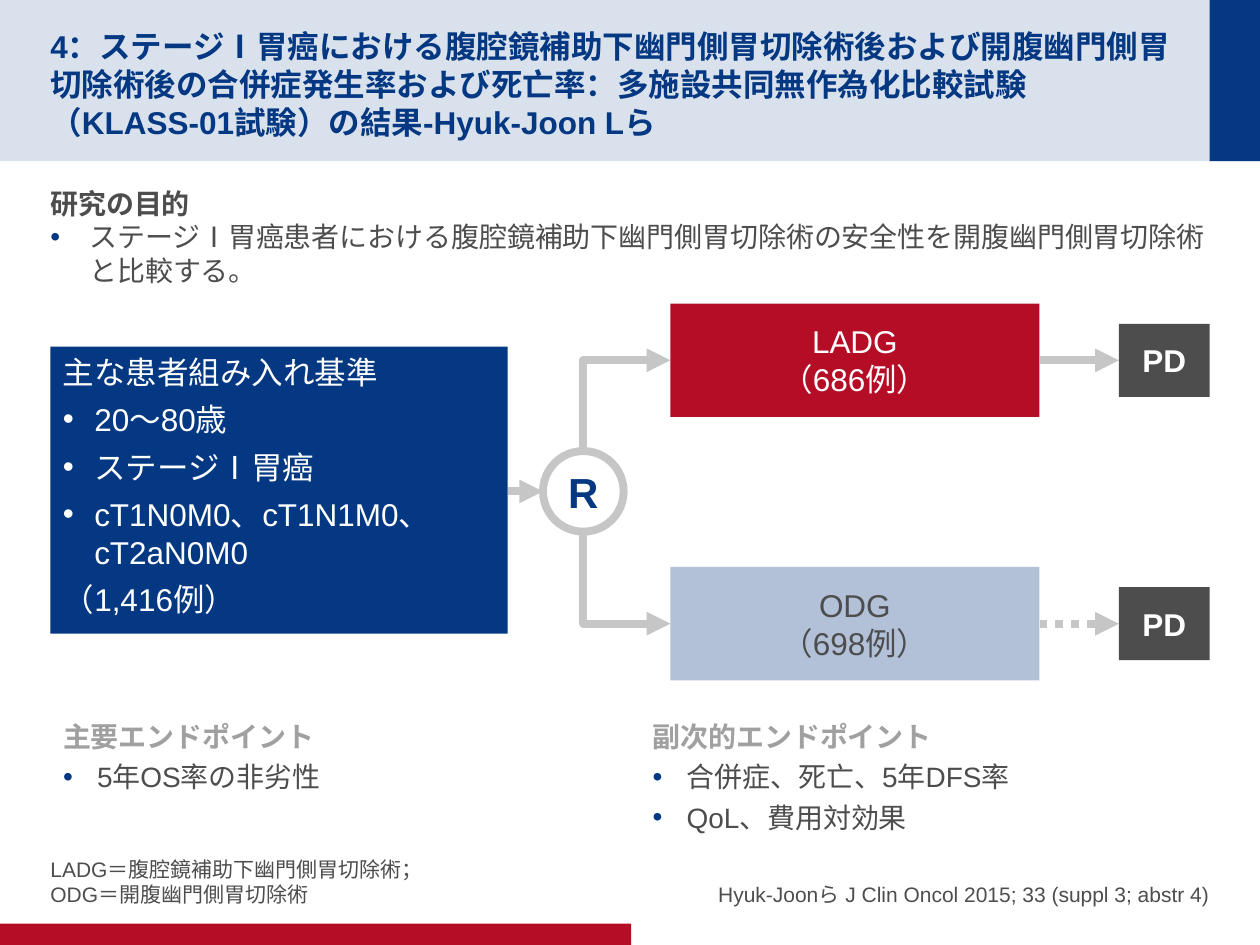
from lxml import etree
from pptx import Presentation
from pptx.dml.color import RGBColor
from pptx.enum.dml import MSO_LINE
from pptx.enum.shapes import MSO_CONNECTOR, MSO_SHAPE
from pptx.enum.text import MSO_ANCHOR, MSO_AUTO_SIZE, PP_ALIGN
from pptx.oxml.ns import qn
from pptx.util import Inches, Pt

RECT, OVAL = MSO_SHAPE.RECTANGLE, MSO_SHAPE.OVAL
STRAIGHT, ELBOW = MSO_CONNECTOR.STRAIGHT, MSO_CONNECTOR.ELBOW
LEFT, CENTER, RIGHT = PP_ALIGN.LEFT, PP_ALIGN.CENTER, PP_ALIGN.RIGHT
TOP, MIDDLE, BOTTOM = MSO_ANCHOR.TOP, MSO_ANCHOR.MIDDLE, MSO_ANCHOR.BOTTOM
DOTTED = MSO_LINE.ROUND_DOT
NAVY, RED, PALE = "043882", "B60D27", "B2C0D8"
DARK, GRAY, SILVER, WHITE = "4D4D4D", "A0A0A0", "C6C6C6", "FFFFFF"
COLUMNS, ROWS = 100, 75


def rgb(color):
    return RGBColor.from_string(color)


def sub(parent, tag, **attrs):
    return etree.SubElement(parent, qn(tag), attrs)


def item(text, indent=0.27, **style):
    return dict(text=text, bullet=True, indent=indent, **style)


class Deck:
    font = "Arial"

    def __init__(self, layout):
        self.prs = Presentation()
        self.prs.slide_width, self.prs.slide_height = Inches(10), Inches(7.5)
        self.s = self.prs.slides.add_slide(self.prs.slide_layouts[layout])

    def x(self, column):
        return round(self.prs.slide_width * column / COLUMNS)

    def y(self, row):
        return round(self.prs.slide_height * row / ROWS)

    def box(self, left, top, width, height):
        return self.x(left), self.y(top), self.x(width), self.y(height)

    def set_text(self, sp, paragraphs, size, color=DARK, bold=False, align=LEFT,
                 anchor=TOP, inset=(0.1, 0.05, 0.1, 0.05), after=0, wrap=True):
        tf = sp.text_frame
        tf.word_wrap, tf.auto_size = wrap, MSO_AUTO_SIZE.NONE
        tf.vertical_anchor = anchor
        (tf.margin_left, tf.margin_top,
         tf.margin_right, tf.margin_bottom) = map(Inches, inset)
        for i, entry in enumerate(paragraphs):
            if isinstance(entry, str):
                entry = dict(text=entry)
            p = tf.add_paragraph() if i else tf.paragraphs[0]
            p.text, p.alignment = entry["text"], align
            p.space_before, p.space_after = Pt(0), Pt(after)
            self.bullet(p, entry)
            p.font.name, p.font.size = self.font, Pt(size)
            p.font.bold = entry.get("bold", bold)
            p.font.color.rgb = rgb(entry.get("color", color))
            sub(p.font._element, "a:ea", typeface=self.font)

    def bullet(self, p, entry):
        pPr = p._p.get_or_add_pPr()
        indent = Inches(entry.get("indent", 0))
        pPr.set("marL", str(indent))
        pPr.set("indent", str(-indent))
        if entry.get("bullet"):
            mark = sub(pPr, "a:buClr")
            sub(mark, "a:srgbClr", val=entry.get("mark", NAVY))
            sub(pPr, "a:buFont", typeface=self.font)
            sub(pPr, "a:buChar", char="•")
        else:
            sub(pPr, "a:buNone")

    def placeholder(self, idx, at, paragraphs, size, **style):
        sp = self.s.placeholders[idx]
        sp.left, sp.top, sp.width, sp.height = self.box(*at)
        self.set_text(sp, paragraphs, size, **style)

    def text(self, at, paragraphs, size, **style):
        self.set_text(self.s.shapes.add_textbox(*self.box(*at)), paragraphs, size, **style)

    def shape(self, kind, at, fill=None, line=None, alpha=None):
        sp = self.s.shapes.add_shape(kind, *self.box(*at))
        sp.shadow.inherit = False
        if fill:
            sp.fill.solid()
            sp.fill.fore_color.rgb = rgb(fill)
        else:
            sp.fill.background()
        if alpha:
            color = sp._element.spPr.find(qn("a:solidFill"))[0]
            sub(color, "a:alpha", val=str(alpha * 1000))
        if line:
            sp.line.color.rgb, sp.line.width = rgb(line), Pt(4.5)
        else:
            sp.line.fill.background()
        return sp

    def panel(self, at, fill, paragraphs, color=WHITE, **style):
        style = dict(align=CENTER, anchor=MIDDLE, inset=(0.1, 0, 0.1, 0)) | style
        self.set_text(self.shape(RECT, at, fill), paragraphs, 18, color=color, **style)

    def arrow(self, x1, y1, x2, y2, kind=STRAIGHT, dash=None):
        c = self.s.shapes.add_connector(kind, self.x(x1), self.y(y1), self.x(x2), self.y(y2))
        c.line.color.rgb, c.line.width = rgb(SILVER), Pt(4.5)
        if dash:
            c.line.dash_style = dash
        sub(c._element.spPr.find(qn("a:ln")), "a:tailEnd", type="triangle")
        sub(c._element.spPr, "a:effectLst")
        return c

    def branch(self, x1, y1, x2, y2):
        cx, cy = (x1 + x2) / 2, (y1 + y2) / 2
        half_w, half_h = abs(y2 - y1) / 2, (x2 - x1) / 2
        turn = 1 if y2 < y1 else -1
        c = self.arrow(cx + half_w, cy + turn * half_h,
                       cx - half_w, cy - turn * half_h, ELBOW)
        c._element.spPr.find(qn("a:prstGeom")).set("prst", "bentConnector2")
        c._element.spPr.find(qn("a:xfrm")).set("rot", str(turn * 90 % 360 * 60000))


def main():
    d = Deck(4)
    d.shape(RECT, (0, 0, 100, 12.8), NAVY, alpha=15)
    d.shape(RECT, (96, 0, 4, 12.8), NAVY)
    d.shape(RECT, (0, 73.3, 50.1, 1.7), RED)
    d.placeholder(0, (4, 2, 90.1, 8.8), [
        "4：ステージⅠ胃癌における腹腔鏡補助下幽門側胃切除術後および開腹幽門側胃切除術後の"
        "合併症発生率および死亡率：多施設共同無作為化比較試験（KLASS-01試験）の結果‐Hyuk-Joon Lら",
    ], 18, color=NAVY, bold=True, anchor=MIDDLE, inset=(0, 0.05, 0, 0))
    d.text((4, 14.3, 93.6, 9.1), [
        dict(text="研究の目的", bold=True),
        item("ステージⅠ胃癌患者における腹腔鏡補助下幽門側胃切除術の安全性を"
             "開腹幽門側胃切除術と比較する。", 0.31),
    ], 16, inset=(0, 0.05, 0.1, 0.05))

    criteria = ["20～80歳", "ステージⅠ胃癌", "cT1N0M0、cT1N1M0、 cT2aN0M0"]
    d.panel((4, 27.5, 36.3, 22.8), NAVY, [
        "主な患者組み入れ基準",
        *[item(text, 0.25, mark=WHITE) for text in criteria],
        dict(text="（1,416例）", indent=0.32),
    ], align=LEFT, anchor=TOP, inset=(0.1, 0.05, 0.1, 0.05), after=5.5)

    d.arrow(40.3, 39, 43.1, 39)
    circle = d.shape(OVAL, (43.1, 35.8, 6.4, 6.4), line=SILVER)
    d.set_text(circle, ["R"], 24, color=NAVY, bold=True, align=CENTER, anchor=MIDDLE, wrap=False)
    arms = [
        ("LADG", "（686例）", RED, WHITE, 28.6, 35.8, None),
        ("ODG", "（698例）", PALE, DARK, 49.5, 42.2, DOTTED),
    ]
    for name, count, fill, color, row, start, dash in arms:
        d.branch(46.3, start, 53.2, row)
        d.panel((53.2, row - 4.5, 29.3, 9), fill, [name, count], color)
        d.arrow(82.5, row, 88.8, row, dash=dash)
        d.panel((88.8, row - 2.9, 7.2, 5.8), DARK, ["PD"], bold=True)

    endpoints = [
        (2, 4, "主要エンドポイント", ["5年OS率の非劣性"]),
        (4, 50.8, "副次的エンドポイント", ["合併症、死亡、5年DFS率", "QoL、費用対効果"]),
    ]
    for idx, column, heading, goals in endpoints:
        d.placeholder(idx, (column, 56.6, 45.2, 11), [
            dict(text=heading, bold=True, color=GRAY), *map(item, goals),
        ], 16, after=4)
    notes = [
        (1, 4, LEFT, "LADG＝腹腔鏡補助下幽門側胃切除術；\vODG＝開腹幽門側胃切除術"),
        (3, 50.8, RIGHT, "Hyuk-Joonら J Clin Oncol 2015; 33 (suppl 3; abstr 4)"),
    ]
    for idx, column, align, note in notes:
        d.placeholder(idx, (column, 66.7, 45.2, 5.3), [note], 12, align=align,
                      anchor=BOTTOM, inset=(0, 0, 0, 0), after=4)
    d.prs.save("out.pptx")


if __name__ == "__main__":
    main()
